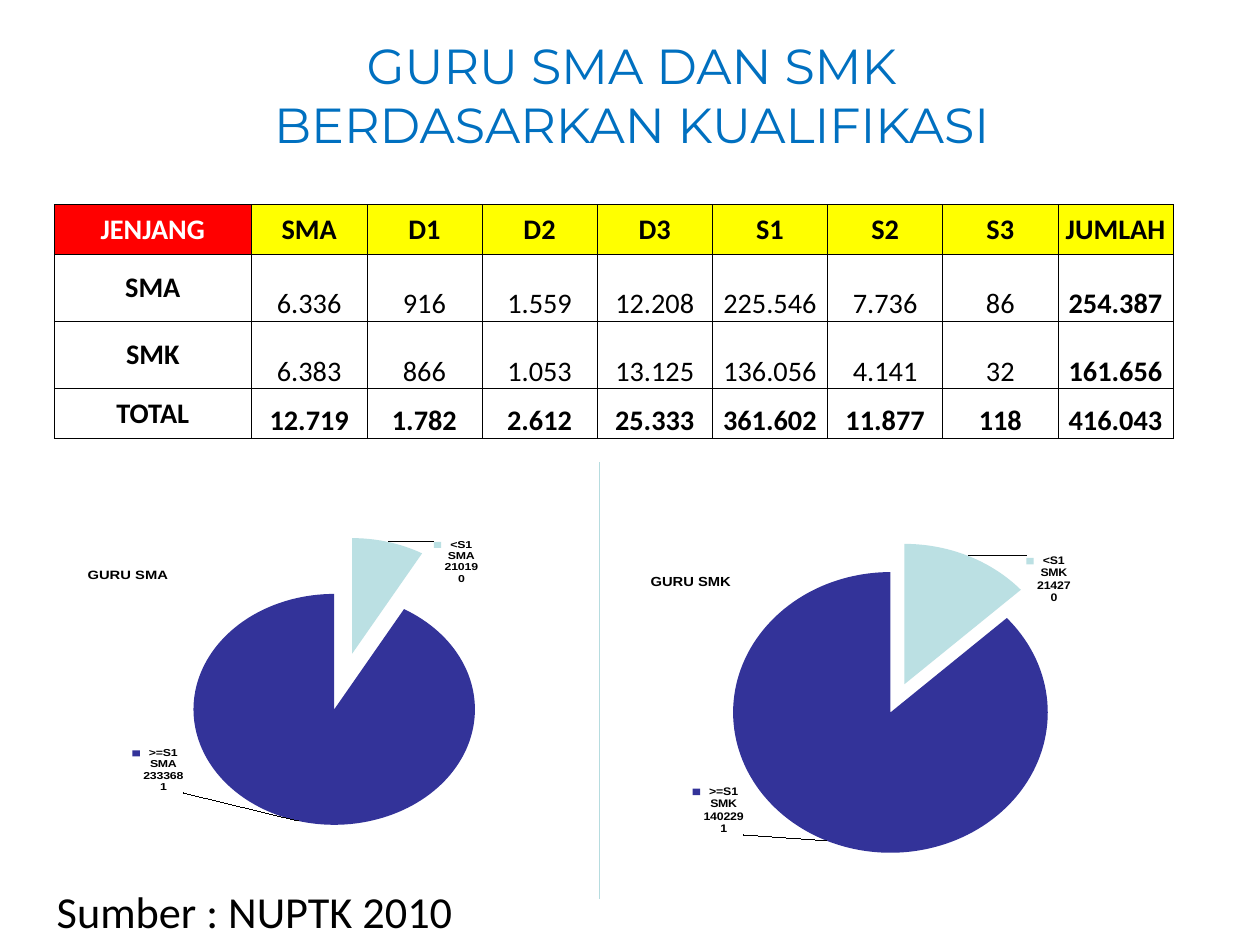
import copy

import lxml.etree
import pptx
import pptx.chart.data
import pptx.dml.color
import pptx.enum.chart
import pptx.enum.shapes
import pptx.enum.text
import pptx.oxml
import pptx.oxml.ns
import pptx.util

ANCHOR = pptx.enum.text.MSO_ANCHOR
ALIGN = pptx.enum.text.PP_ALIGN
qn = pptx.oxml.ns.qn

W, H = 14.22, 10.67
ROWS = [
    ["JENJANG", "SMA", "D1", "D2", "D3", "S1", "S2", "S3", "JUMLAH"],
    ["SMA", "6.336", "916", "1.559", "12.208", "225.546", "7.736", "86", "254.387"],
    ["SMK", "6.383", "866", "1.053", "13.125", "136.056", "4.141", "32", "161.656"],
    ["TOTAL", "12.719", "1.782", "2.612", "25.333", "361.602", "11.877", "118", "416.043"],
]
COL_WIDTHS = [2.23] + [1.3] * 8
ROW_HEIGHTS = [0.56, 0.76, 0.76, 0.56]


def inches(*values):
    return [pptx.util.Inches(v) for v in values]


def color(value):
    return pptx.dml.color.RGBColor.from_string(value)


def add_xml(parent, tag, **attrs):
    return lxml.etree.SubElement(parent, qn(tag), attrs)


def format_font(font, size, name, fill="000000", bold=False):
    font.size = pptx.util.Pt(size)
    font.name = name
    font.bold = bold
    font.color.rgb = color(fill)


def write_text(tf, text, size=23, name="Calibri", fill="000000", bold=False,
               align=ALIGN.CENTER, anchor=ANCHOR.MIDDLE):
    tf.vertical_anchor = anchor
    p = tf.paragraphs[0]
    p.alignment = align
    for i, line in enumerate(text.split("\n")):
        if i:
            p.add_line_break()
        r = p.add_run()
        r.text = line
        format_font(r.font, size, name, fill, bold)


def set_margins(target, x, y):
    target.margin_left = target.margin_right = pptx.util.Inches(x)
    target.margin_top = target.margin_bottom = pptx.util.Inches(y)


def add_title(s):
    sp = s.shapes.title
    sp.left, sp.top, sp.width, sp.height = inches(0.73, 0.18, 12.8, 1.78)
    set_margins(sp.text_frame, 0.06, 0.06)
    write_text(sp.text_frame, "GURU SMA DAN SMK\nBERDASARKAN KUALIFIKASI",
               size=40, name="Montserrat", fill="0070C0")


def set_borders(cell):
    tcPr = cell._tc.get_or_add_tcPr()
    for i, side in enumerate(("a:lnL", "a:lnR", "a:lnT", "a:lnB")):
        ln = add_xml(tcPr, side, w=str(pptx.util.Pt(0.5)))
        add_xml(add_xml(ln, "a:solidFill"), "a:srgbClr", val="000000")
        tcPr.insert(i, ln)


def format_cell(cell, text, row, col):
    header, label = row == 0, col == 0
    number = not header and not label
    set_margins(cell, 0, 0)
    if header:
        cell.fill.solid()
        cell.fill.fore_color.rgb = color("FF0000" if label else "FFFF00")
    else:
        cell.fill.background()
    set_borders(cell)
    cell.vertical_anchor = ANCHOR.BOTTOM if number else ANCHOR.MIDDLE
    bold = not number or row == len(ROWS) - 1 or col == len(COL_WIDTHS) - 1
    write_text(cell.text_frame, text, bold=bold, anchor=cell.vertical_anchor,
               fill="FFFFFF" if header and label else "000000")


def add_teacher_table(s):
    table = s.shapes.add_table(
        len(ROWS), len(COL_WIDTHS),
        *inches(0.61, 2.31, sum(COL_WIDTHS), sum(ROW_HEIGHTS))).table
    table.first_row = table.horz_banding = False
    for column, width in zip(table.columns, COL_WIDTHS):
        column.width = pptx.util.Inches(width)
    for i, height in enumerate(ROW_HEIGHTS):
        table.rows[i].height = pptx.util.Inches(height)
        for j, text in enumerate(ROWS[i]):
            format_cell(table.cell(i, j), text, i, j)


def make_layout(x, y, w=None, h=None, mode="edge"):
    layout = lxml.etree.Element(qn("c:layout"))
    manual = add_xml(layout, "c:manualLayout")
    if w:
        add_xml(manual, "c:layoutTarget", val="inner")
    if mode == "edge":
        add_xml(manual, "c:xMode", val=mode)
        add_xml(manual, "c:yMode", val=mode)
    for key, value in zip("xywh", (x, y, w, h)):
        if value is not None:
            add_xml(manual, f"c:{key}", val=str(value))
    return layout


def set_chart_title(chart, text, place):
    title = chart.chart_title
    write_text(title.text_frame, text, size=12, name="Arial", bold=True)
    el = title._element
    for old in el.findall(qn("c:layout")) + el.findall(qn("c:overlay")):
        el.remove(old)
    tx = el.find(qn("c:tx"))
    layout = make_layout(*place)
    tx.addnext(layout)
    overlay = lxml.etree.Element(qn("c:overlay"), {"val": "1"})
    layout.addnext(overlay)


def set_labels(series, offsets):
    labels = series.data_labels
    labels.number_format = "#,##0"
    labels.number_format_is_linked = False
    format_font(labels.font, 10, "Arial", bold=True)
    labels.position = pptx.enum.chart.XL_LABEL_POSITION.OUTSIDE_END
    labels.show_legend_key = labels.show_value = labels.show_percentage = True
    labels.show_category_name = labels.show_series_name = True
    el = labels._element
    separator = lxml.etree.Element(qn("c:separator"))
    separator.text = "\n"
    el.find(qn("c:showBubbleSize")).addnext(separator)
    shared = [child for child in el if child.tag != qn("c:showLeaderLines")]
    for i, offset in enumerate(offsets):
        label = lxml.etree.Element(qn("c:dLbl"))
        add_xml(label, "c:idx", val=str(i))
        label.append(make_layout(*offset, mode="factor"))
        label.extend(copy.deepcopy(shared))
        el.insert(i, label)


def add_pie(s, name, values, box, plot_box, explosion, title_place, offsets):
    data = pptx.chart.data.CategoryChartData()
    data.categories = ["<S1", ">=S1"]
    data.add_series(name, values)
    chart = s.shapes.add_chart(pptx.enum.chart.XL_CHART_TYPE.PIE,
                               *inches(*box), data).chart
    format_font(chart.font, 10, "Arial")
    chart.has_legend = False
    set_chart_title(chart, f"GURU {name}", title_place)
    area = chart._chartSpace.chart.plotArea
    for old in area.findall(qn("c:layout")):
        area.remove(old)
    area.insert(0, make_layout(*plot_box))
    series = chart.plots[0].series[0]
    for i, fill in enumerate(("BBE0E3", "333399")):
        point = series.points[i].format.fill
        point.solid()
        point.fore_color.rgb = color(fill)
    set_labels(series, offsets)
    burst = lxml.etree.Element(qn("c:explosion"), {"val": str(explosion)})
    series._element.find(qn("c:dPt")).addprevious(burst)
    for dPt in series._element.findall(qn("c:dPt")):
        dPt.find(qn("c:spPr")).addprevious(copy.deepcopy(burst))


def add_divider(s):
    line = s.shapes.add_connector(pptx.enum.shapes.MSO_CONNECTOR.STRAIGHT,
                                  *inches(6.77, 5.22, 6.77, 10.15))
    line.line.color.rgb = color("B6DCDF")
    line.line.width = pptx.util.Pt(0.75)
    add_xml(line._element.spPr, "a:effectLst")


def add_source_note(s):
    tf = s.shapes.add_textbox(*inches(0.5, 9.91, 4.8, 0.75)).text_frame
    tf.word_wrap = False
    set_margins(tf, 0.14, 0.07)
    write_text(tf, "Sumber : NUPTK 2010", size=36,
               align=ALIGN.LEFT, anchor=ANCHOR.TOP)


def main():
    prs = pptx.Presentation()
    prs.slide_width, prs.slide_height = inches(W, H)
    s = prs.slides.add_slide(prs.slide_layouts[5])
    add_title(s)
    add_pie(s, "SMA", (21019, 233368), (0.39, 5.56, 7.11, 4.27),
            (0.2, 0.07, 0.58, 0.93), 25, (0.08, 0.16), [(0.07, 0.15), (-0.18, -0.25)])
    add_pie(s, "SMK", (21427, 140229), (6.89, 5.67, 7.04, 4.43),
            (0.18, 0.06, 0.56, 0.89), 11, (0.06, 0.14), [(0.09, 0.15), (-0.13, -0.17)])
    add_teacher_table(s)
    add_divider(s)
    add_source_note(s)
    prs.save("out.pptx")


if __name__ == "__main__":
    main()
